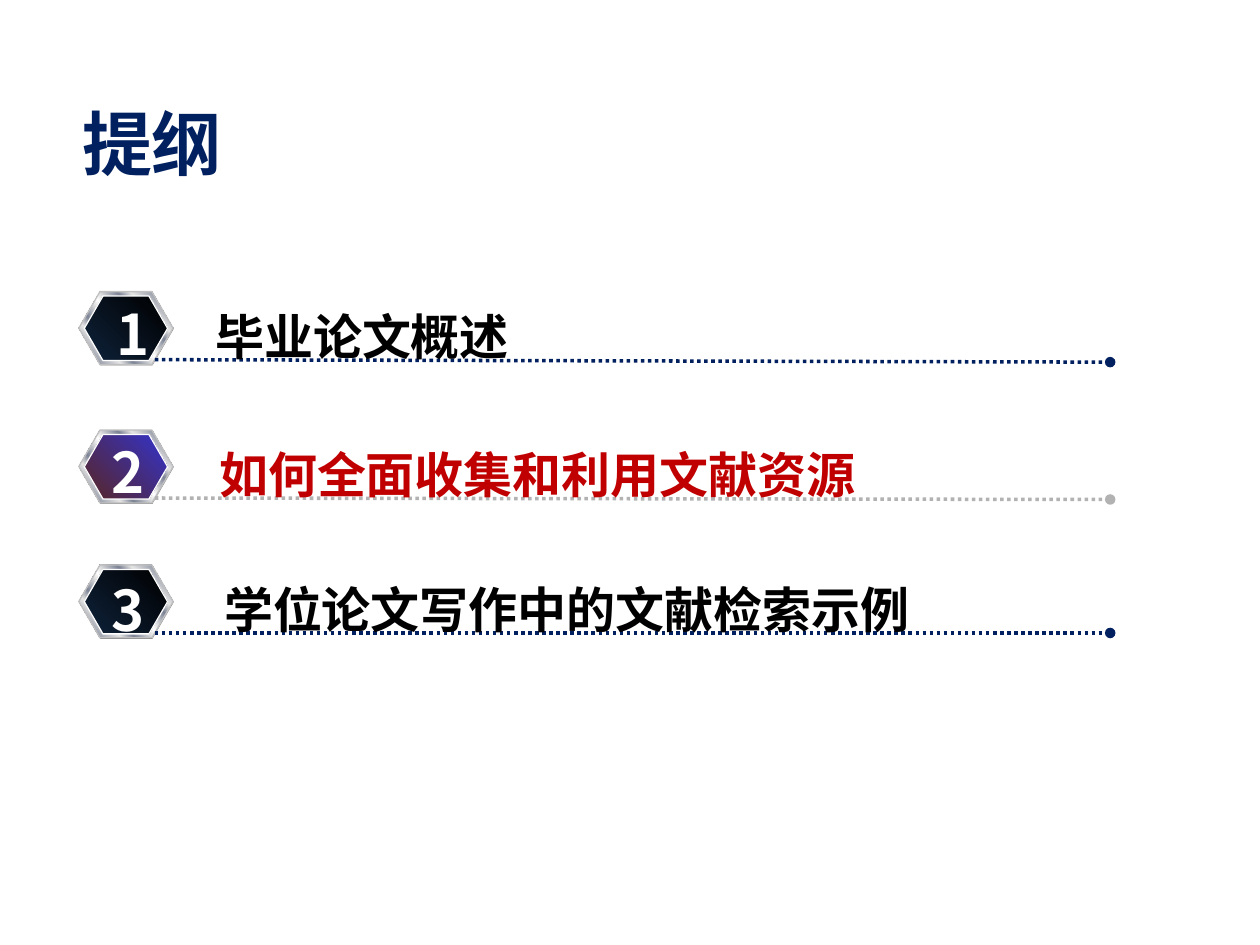
from pptx import Presentation
from pptx.dml.color import RGBColor
from pptx.enum.dml import MSO_LINE
from pptx.enum.shapes import MSO_CONNECTOR, MSO_SHAPE
from pptx.enum.text import MSO_ANCHOR, MSO_AUTO_SIZE, PP_ALIGN
from pptx.oxml.ns import qn
from pptx.oxml.xmlchemy import OxmlElement
from pptx.util import Cm, Pt

HEXAGON = MSO_SHAPE.HEXAGON
STRAIGHT = MSO_CONNECTOR.STRAIGHT
DOTS = MSO_LINE.ROUND_DOT
MIDDLE = MSO_ANCHOR.MIDDLE
GROW = MSO_AUTO_SIZE.SHAPE_TO_FIT_TEXT
LEFT, CENTER = PP_ALIGN.LEFT, PP_ALIGN.CENTER

NAVY = RGBColor(0x00, 0x20, 0x60)
BLACK = RGBColor(0x00, 0x00, 0x00)
WHITE = RGBColor(0xFF, 0xFF, 0xFF)
RED = RGBColor(0xC0, 0x00, 0x00)
GRAY = RGBColor(0x80, 0x80, 0x80)
SILVER = RGBColor(0xC0, 0xC0, 0xC0)
PALE = RGBColor(0xB2, 0xB2, 0xB2)
LIGHT = RGBColor(0xE6, 0xE6, 0xE6)
STEEL = RGBColor(0x7D, 0x84, 0x96)
INK = RGBColor(0x0E, 0x22, 0x3A)
BROWN = RGBColor(0x59, 0x25, 0x24)
BLUE = RGBColor(0x33, 0x33, 0xCC)

SANS = "Noto Sans CJK SC"
CHROME = [(0, LIGHT), (8, STEEL), (26, LIGHT), (34, STEEL), (46, LIGHT),
          (50, WHITE), (54, LIGHT), (66, STEEL), (74, LIGHT), (92, STEEL),
          (100, LIGHT)]
DARK = [(0, INK), (100, BLACK)]
VIVID = [(0, BROWN), (100, BLUE)]

# top, label, label left, label width, label colour, number left, number top,
# line colour, line drop, hexagon colours
ROWS = [
    (5.97, "毕业论文概述", 4.09, 6.5, BLACK, 2.08, 5.92, NAVY, 0.05, DARK),
    (8.76, "如何全面收集和利用文献资源", 4.17, 13.49, RED, 1.98, 8.69, PALE, 0.03, VIVID),
    (11.48, "学位论文写作中的文献检索示例", 4.27, 14.48, BLACK, 1.98, 11.48, NAVY, 0, DARK),
]


def style(frame, text, size, color, align, face=SANS):
    """Fill a text frame with one bold run, in Latin and East Asian faces."""
    frame.text = text
    line = frame.paragraphs[0]
    line.alignment = align
    font = line.runs[0].font
    font.name, font.size, font.bold = face, Pt(size), True
    font.color.rgb = color
    east = OxmlElement("a:ea")
    east.set("typeface", SANS)
    font._element.find(qn("a:latin")).addnext(east)


def blend(shape, stops, edge):
    """Give a shape a diagonal gradient and a thin outline."""
    shape.fill.gradient()
    shape.fill.gradient_angle = 45
    bar = shape._element.spPr.find(".//" + qn("a:gsLst"))
    for old in list(bar):
        bar.remove(old)
    for place, color in stops:
        stop = OxmlElement("a:gs")
        stop.set("pos", str(place * 1000))
        tint = OxmlElement("a:srgbClr")
        tint.set("val", str(color))
        stop.append(tint)
        bar.append(stop)
    shape.line.color.rgb = edge
    shape.line.width = Pt(0.75)


deck = Presentation()
deck.slide_width, deck.slide_height = Cm(25.4), Cm(19.05)
slide = deck.slides.add_slide(deck.slide_layouts[5])

title = slide.shapes.title
title.left, title.top = Cm(1.4), Cm(1.98)
title.width, title.height = Cm(20.24), Cm(1.78)
title.text_frame.vertical_anchor = MIDDLE
style(title.text_frame, "提纲", 40, NAVY, LEFT, "DejaVu Sans")

for index, row in enumerate(ROWS, 1):
    top, label, left, width, color, num_left, num_top, rule, drop, stops = row
    group = slide.shapes.add_group_shape().shapes

    back = group.add_shape(HEXAGON, Cm(1.6), Cm(top - 0.07), Cm(1.9), Cm(1.47))
    rim = group.add_shape(HEXAGON, Cm(1.59), Cm(top - 0.09), Cm(1.9), Cm(1.47))
    face = group.add_shape(HEXAGON, Cm(1.7), Cm(top), Cm(1.68), Cm(1.3))
    for shape in (back, rim, face):
        shape.shadow.inherit = False
        shape.adjustments[0] = 0.29
    back.fill.solid()
    back.fill.fore_color.rgb = GRAY
    back.line.fill.background()
    blend(rim, CHROME, SILVER)
    blend(face, stops, WHITE)

    base = top + 1.28
    line = group.add_connector(STRAIGHT, Cm(3.12), Cm(base), Cm(22.38), Cm(base + drop))
    line.line.color.rgb = rule
    line.line.width = Pt(2)
    line.line.dash_style = DOTS
    dot = OxmlElement("a:tailEnd")
    dot.set("type", "oval")
    line.line._get_or_add_ln().append(dot)
    line._element.spPr.append(OxmlElement("a:effectLst"))

    for text, x, y, w, h, size, ink, align in (
        (label, left, top + 0.08, width, 1.45, 28, color, LEFT),
        (str(index), num_left, num_top, 1.22, 1.63, 32, WHITE, CENTER),
    ):
        frame = group.add_textbox(Cm(x), Cm(y), Cm(w), Cm(h)).text_frame
        frame.word_wrap = False
        frame.auto_size = GROW
        style(frame, text, size, ink, align)

deck.save("out.pptx")
